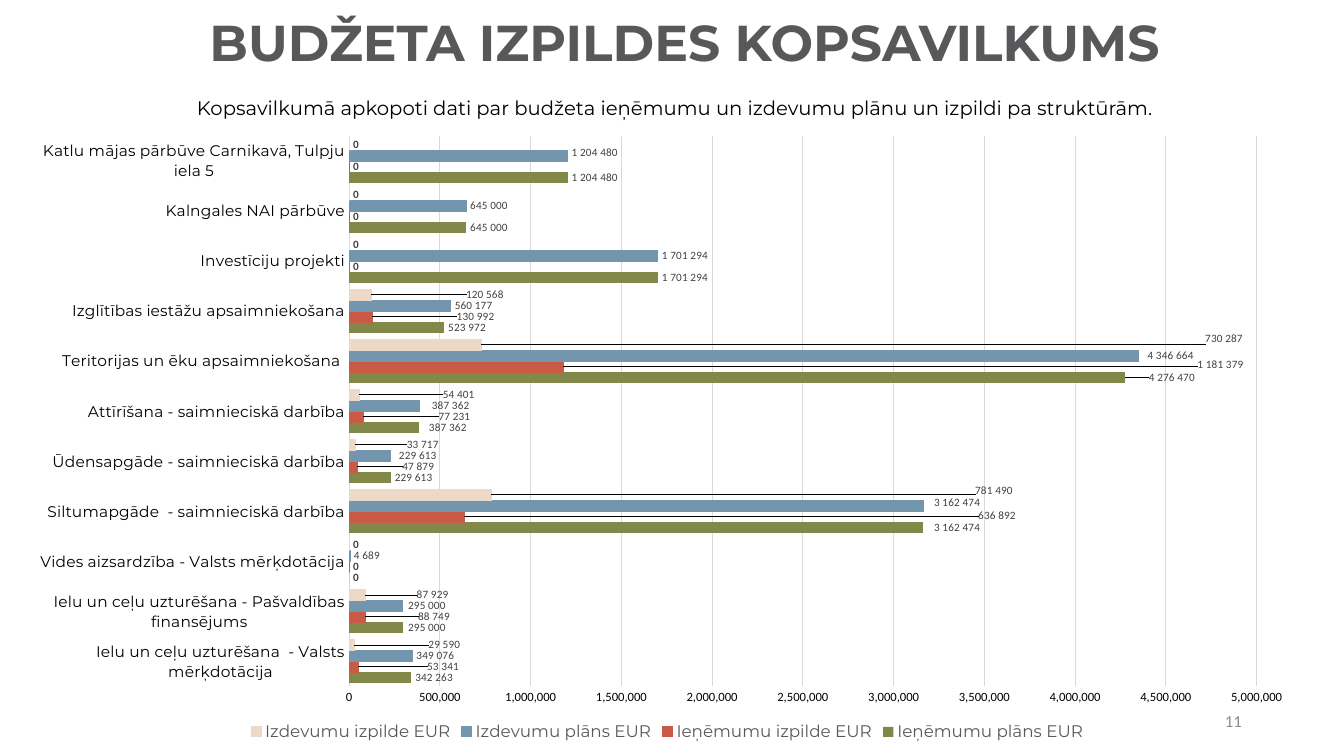
import pptx
import pptx.chart.data
import pptx.dml.color
import pptx.enum.chart
import pptx.enum.text
import pptx.oxml
import pptx.oxml.ns
import pptx.util

Pt = pptx.util.Pt
RGBColor = pptx.dml.color.RGBColor
XL = pptx.enum.chart
ALIGN = pptx.enum.text.PP_ALIGN
ANCHOR = pptx.enum.text.MSO_ANCHOR

BLACK = RGBColor(0x00, 0x00, 0x00)
TITLE_GREY = RGBColor(0x58, 0x58, 0x5B)
NUMBER_GREY = RGBColor(0x8C, 0x8C, 0x8C)
LABEL_GREY = RGBColor(0x40, 0x40, 0x40)
LEGEND_GREY = RGBColor(0x59, 0x59, 0x59)
GRID_GREY = RGBColor(0xD9, 0xD9, 0xD9)
OLIVE = RGBColor(0x82, 0x88, 0x47)
RED = RGBColor(0xC9, 0x5B, 0x46)
BLUE = RGBColor(0x73, 0x95, 0xAD)
BEIGE = RGBColor(0xEC, 0xD9, 0xC8)

CATEGORIES = [
    "Ielu un ceļu uzturēšana  - Valsts mērķdotācija",
    "Ielu un ceļu uzturēšana - Pašvaldības finansējums",
    "Vides aizsardzība - Valsts mērķdotācija",
    "Siltumapgāde  - saimnieciskā darbība",
    "Ūdensapgāde - saimnieciskā darbība",
    "Attīrīšana - saimnieciskā darbība",
    "Teritorijas un ēku apsaimniekošana ",
    "Izglītības iestāžu apsaimniekošana",
    "Investīciju projekti",
    "Kalngales NAI pārbūve",
    "Katlu mājas pārbūve Carnikavā, Tulpju iela 5",
]

# Name, colour, values, and label shifts in points by category index
SERIES = [
    ("Ieņēmumu plāns EUR", OLIVE,
     [342263, 295000, 0, 3162474, 229613, 387362, 4276470, 523972, 1701294, 645000, 1204480],
     {1: (1, 0), 3: (5, 0), 5: (4, 0), 6: (14, 0)}),
    ("Ieņēmumu izpilde EUR", RED,
     [53341, 88749, 0, 636892, 47879, 77231, 1181379, 130992, 0, 0, 0],
     {0: (46, 0), 1: (35, 0), 3: (364, -1), 4: (29, 0), 5: (51, 0), 6: (450, -1), 7: (57, 0)}),
    ("Izdevumu plāns EUR", BLUE,
     [349076, 295000, 4689, 3162474, 229613, 387362, 4346664, 560177, 1701294, 645000, 1204480],
     {1: (1, 0), 3: (5, -2), 4: (3, 0), 5: (6, 0), 6: (4, 0), 10: (0, -2)}),
    ("Izdevumu izpilde EUR", BEIGE,
     [29590, 87929, 0, 781490, 33717, 54401, 730287, 120568, 0, 0, 0],
     {0: (50, 0), 1: (34, 0), 3: (343, -3), 4: (34, 0), 5: (57, 0), 6: (514, -4), 7: (65, 0)}),
]


def set_font(font, size, color, name, bold=False):
    font.size = Pt(size)
    font.color.rgb = color
    font.name = name
    font.bold = bold


def write(tf, text, size, color, name, bold=False, align=None, spacing=None):
    p = tf.paragraphs[0]
    p.alignment = align
    p.line_spacing = spacing
    r = p.add_run()
    r.text = text
    set_font(r.font, size, color, name, bold)


def manual_layout(**parts):
    """Return a c:layout element with the given manual values."""
    items = "".join(f'<c:{tag} val="{value}"/>' for tag, value in parts.items())
    return pptx.oxml.parse_xml(
        f'<c:layout {pptx.oxml.ns.nsdecls("c")}><c:manualLayout>{items}</c:manualLayout></c:layout>')


class Deck:
    HEAD = "Montserrat"
    BODY = "Calibri"

    def __init__(self, width, height):
        self.prs = pptx.Presentation()
        self.prs.slide_width, self.prs.slide_height = Pt(width), Pt(height)
        self.s = None

    def add_slide(self):
        self.s = self.prs.slides.add_slide(self.prs.slide_layouts[5])

    def title(self, text, x, y, w, h):
        sp = self.s.shapes.title
        sp.left, sp.top, sp.width, sp.height = Pt(x), Pt(y), Pt(w), Pt(h)
        tf = sp.text_frame
        tf.vertical_anchor = ANCHOR.MIDDLE
        write(tf, text, 36, TITLE_GREY, self.HEAD, bold=True, align=ALIGN.CENTER, spacing=0.9)

    def text(self, text, x, y, w, h, anchor=ANCHOR.TOP, **fmt):
        tf = self.s.shapes.add_textbox(Pt(x), Pt(y), Pt(w), Pt(h)).text_frame
        tf.word_wrap = True
        tf.vertical_anchor = anchor
        write(tf, text, **fmt)

    def bar_chart(self, x, y, w, h):
        data = pptx.chart.data.CategoryChartData(number_format="#,##0")
        data.categories = CATEGORIES
        for name, _, values, _ in SERIES:
            data.add_series(name, values)
        chart = self.s.shapes.add_chart(
            XL.XL_CHART_TYPE.BAR_CLUSTERED, Pt(x), Pt(y), Pt(w), Pt(h), data).chart
        set_font(chart.font, 10, BLACK, self.BODY)
        chart.has_title = False

        # Legend
        chart.has_legend = True
        chart.legend.position = XL.XL_LEGEND_POSITION.BOTTOM
        chart.legend.include_in_layout = False
        set_font(chart.legend.font, 12, LEGEND_GREY, self.HEAD)

        # Axes
        for axis, size, name in ((chart.category_axis, 11, self.HEAD),
                                 (chart.value_axis, 9, self.BODY)):
            axis.major_tick_mark = axis.minor_tick_mark = XL.XL_TICK_MARK.NONE
            axis.format.line.fill.background()
            set_font(axis.tick_labels.font, size, BLACK, name)
        axis = chart.value_axis
        axis.minimum_scale, axis.maximum_scale, axis.major_unit = 0, 5000000, 500000
        axis.tick_labels.number_format = "#,##0"
        axis.tick_labels.number_format_is_linked = False
        axis.has_major_gridlines = True
        axis.major_gridlines.format.line.color.rgb = GRID_GREY
        axis.major_gridlines.format.line.width = Pt(0.75)

        # Plot area
        area = chart.element.xpath("c:chart/c:plotArea")[0]
        for old in area.xpath("c:layout"):
            area.remove(old)
        area.insert(0, manual_layout(layoutTarget="inner", xMode="edge", yMode="edge",
                                     x=0.255, y=0.013, w=0.699, h=0.891))

        # Bars and their labels
        plot = chart.plots[0]
        plot.gap_width, plot.overlap, plot.vary_by_categories = 60, 0, False
        for series, (_, color, values, shifts) in zip(plot.series, SERIES):
            series.format.fill.solid()
            series.format.fill.fore_color.rgb = color
            if color != OLIVE:
                series.format.line.color.rgb = color
                series.format.line.width = Pt(0.75)
            labels = series.data_labels
            labels.show_value = True
            labels.position = XL.XL_LABEL_POSITION.OUTSIDE_END
            labels.number_format = "#,##0"
            labels.number_format_is_linked = False
            set_font(labels.font, 8, LABEL_GREY, self.BODY, bold=True)
            for i, value in enumerate(values):
                if value:
                    label = series.points[i].data_label
                    write(label.text_frame, f"{value:,}".replace(",", " "),
                          8, LABEL_GREY, self.BODY)
                    label.position = XL.XL_LABEL_POSITION.OUTSIDE_END
            for i, (dx, dy) in shifts.items():
                idx = chart.element.xpath(
                    f".//c:ser[c:idx/@val={series.index}]/c:dLbls/c:dLbl/c:idx[@val={i}]")[0]
                idx.addnext(manual_layout(x=round(dx / w, 4), y=round(dy / h, 4)))


def main():
    deck = Deck(960, 540)
    deck.add_slide()
    deck.title("BUDŽETA IZPILDES KOPSAVILKUMS", 68.4, 1.44, 841, 61.2)
    deck.text("11", 678.24, 500.4, 216, 28.8, anchor=ANCHOR.MIDDLE, size=12,
              color=NUMBER_GREY, name=deck.BODY, align=ALIGN.RIGHT)
    deck.bar_chart(12.96, 91.44, 927.36, 441.36)
    deck.text("Kopsavilkumā apkopoti dati par budžeta ieņēmumu un izdevumu plānu "
              "un izpildi pa struktūrām.", 68.4, 64.8, 828, 24.48, size=14,
              color=BLACK, name=deck.HEAD, align=ALIGN.CENTER)
    deck.prs.save("out.pptx")


if __name__ == "__main__":
    main()
